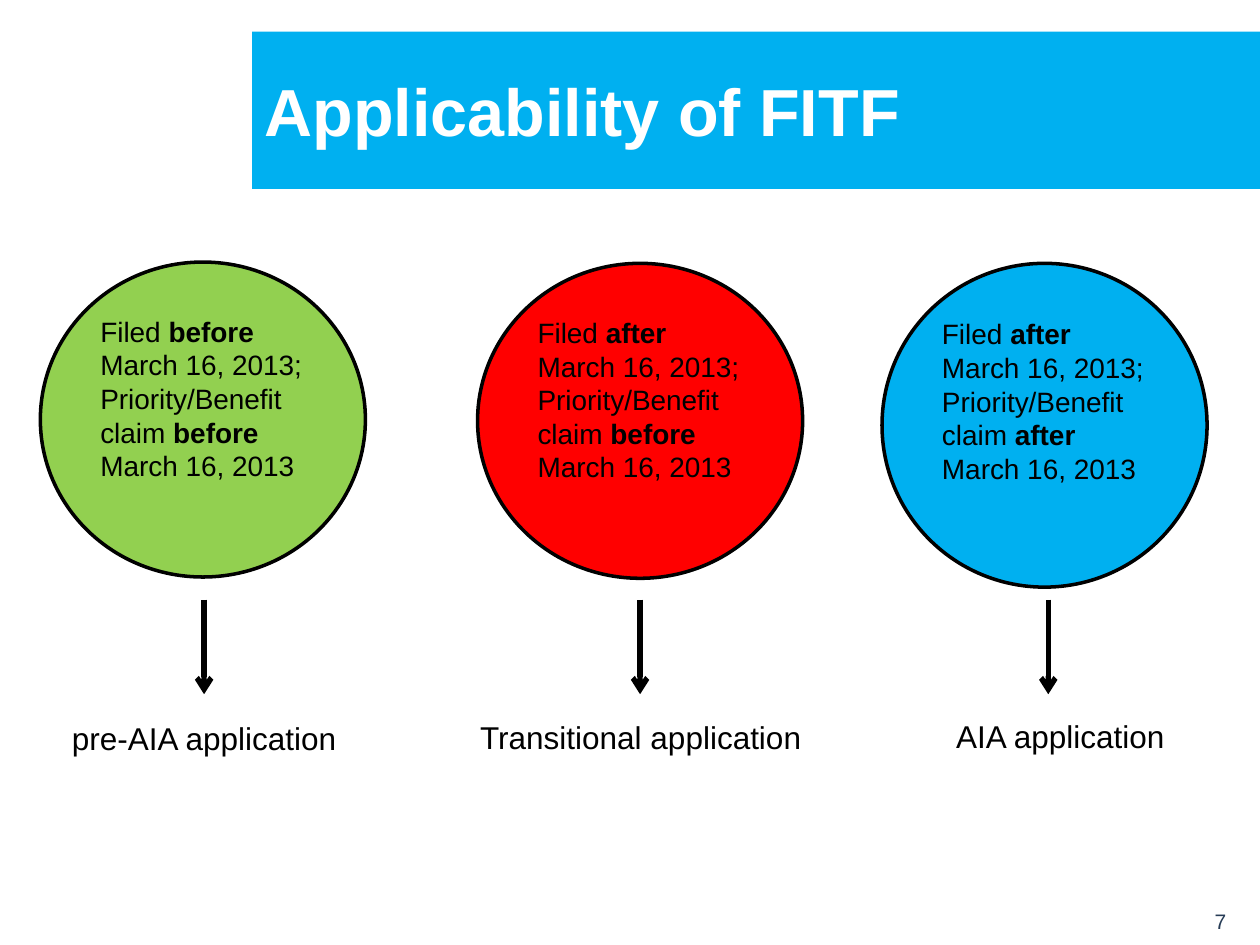
from dataclasses import dataclass

from lxml import etree
from pptx import Presentation
from pptx.dml.color import RGBColor
from pptx.enum.shapes import MSO_CONNECTOR, MSO_SHAPE
from pptx.enum.text import MSO_ANCHOR, MSO_AUTO_SIZE, PP_ALIGN
from pptx.oxml.ns import qn
from pptx.util import Inches, Pt

ELLIPSE = MSO_SHAPE.OVAL
STRAIGHT = MSO_CONNECTOR.STRAIGHT
TOP, MIDDLE, BOTTOM = MSO_ANCHOR.TOP, MSO_ANCHOR.MIDDLE, MSO_ANCHOR.BOTTOM
LEFT, CENTER, RIGHT = PP_ALIGN.LEFT, PP_ALIGN.CENTER, PP_ALIGN.RIGHT
NO_FIT = MSO_AUTO_SIZE.NONE
FIT_SHAPE = MSO_AUTO_SIZE.SHAPE_TO_FIT_TEXT


@dataclass(frozen=True)
class Theme:
    """Colours, font and type sizes of the slide."""

    font: str = "Arial"
    white: str = "FFFFFF"
    black: str = "000000"
    navy: str = "273C56"
    blue: str = "00B0F0"
    green: str = "92D050"
    red: str = "FF0000"
    title_size: int = 38
    label_size: int = 18
    body_size: int = 16
    number_size: int = 12


THEME = Theme()

CASES = [
    {
        "circle": (0.32, 2.08, 2.58, 2.5),
        "fill": THEME.green,
        "paragraphs": [
            [("Filed ", False), ("before", True), (" March 16, 2013;", False)],
            [("Priority/Benefit claim ", False), ("before", True), (" March 16, 2013", False)],
        ],
        "arrow_x": 1.62,
        "label": "pre-AIA application",
        "label_box": (0.46, 5.66, 2.32, 0.4),
    },
    {
        "circle": (3.79, 2.09, 2.58, 2.5),
        "fill": THEME.red,
        "paragraphs": [
            [("Filed ", False), ("after", True),
             (" March 16, 2013; Priority/Benefit claim ", False),
             ("before", True), (" March 16, 2013", False)],
        ],
        "arrow_x": 5.08,
        "label": "Transitional application",
        "label_box": (3.7, 5.65, 2.77, 0.4),
    },
    {
        "circle": (7, 2.09, 2.58, 2.57),
        "fill": THEME.blue,
        "paragraphs": [
            [("Filed ", False), ("after", True),
             (" March 16, 2013; Priority/Benefit claim ", False),
             ("after", True), (" March 16, 2013", False)],
        ],
        "arrow_x": 8.32,
        "label": "AIA application",
        "label_box": (7.48, 5.64, 1.87, 0.4),
    },
]


def inches(box):
    """Turn a tuple of numbers into lengths."""
    return [Inches(value) for value in box]


def paint(fill, color):
    """Give a fill one solid colour."""
    fill.solid()
    fill.fore_color.rgb = RGBColor.from_string(color)


def write_runs(paragraph, runs, size, color, alignment=LEFT):
    """Add (text, bold) runs to a paragraph."""
    paragraph.alignment = alignment
    for text, bold in runs:
        run = paragraph.add_run()
        run.text = text
        run.font.name = THEME.font
        run.font.size = Pt(size)
        run.font.bold = bold
        run.font.color.rgb = RGBColor.from_string(color)


def add_title(slide, box, text):
    """Place the title placeholder as a coloured band."""
    title = slide.shapes.title
    title.left, title.top, title.width, title.height = inches(box)
    paint(title.fill, THEME.blue)
    frame = title.text_frame
    frame.auto_size = NO_FIT
    frame.vertical_anchor = MIDDLE
    write_runs(frame.paragraphs[0], [(text, True)], THEME.title_size, THEME.white)


def add_circle(slide, box, fill, paragraphs):
    """Draw an outlined circle holding the filing conditions."""
    circle = slide.shapes.add_shape(ELLIPSE, *inches(box))
    circle.shadow.inherit = False
    paint(circle.fill, fill)
    paint(circle.line.fill, THEME.black)
    circle.line.width = Pt(2)
    frame = circle.text_frame
    frame.word_wrap = True
    frame.vertical_anchor = TOP
    for index, runs in enumerate(paragraphs):
        paragraph = frame.add_paragraph() if index else frame.paragraphs[0]
        write_runs(paragraph, runs, THEME.body_size, THEME.black)


def add_arrow(slide, x, top, bottom):
    """Draw a vertical arrow pointing down."""
    arrow = slide.shapes.add_connector(STRAIGHT, *inches((x, top, x, bottom)))
    paint(arrow.line.fill, THEME.black)
    arrow.line.width = Pt(3)
    etree.SubElement(arrow.line._get_or_add_ln(), qn("a:tailEnd"), type="arrow")
    etree.SubElement(arrow._element.spPr, qn("a:effectLst"))


def add_label(slide, box, text):
    """Place a centred application type under its arrow."""
    frame = slide.shapes.add_textbox(*inches(box)).text_frame
    frame.word_wrap = False
    frame.auto_size = FIT_SHAPE
    write_runs(frame.paragraphs[0], [(text, False)], THEME.label_size, THEME.black, CENTER)


def add_case(slide, case):
    """Build one column: circle, arrow and label."""
    add_circle(slide, case["circle"], case["fill"], case["paragraphs"])
    add_arrow(slide, case["arrow_x"], 4.76, 5.51)
    add_label(slide, case["label_box"], case["label"])


def add_slide_number(slide, box, text):
    """Place the slide number at the bottom right."""
    frame = slide.shapes.add_textbox(*inches(box)).text_frame
    frame.word_wrap = True
    frame.vertical_anchor = BOTTOM
    frame.margin_bottom = Inches(0.01)
    write_runs(frame.paragraphs[0], [(text, False)], THEME.number_size, THEME.navy, RIGHT)


def main():
    """Build and save the presentation."""
    presentation = Presentation()
    presentation.slide_width = Inches(10)
    presentation.slide_height = Inches(7.5)
    slide = presentation.slides.add_slide(presentation.slide_layouts.get_by_name("Title Only"))
    paint(slide.background.fill, THEME.white)
    add_title(slide, (2, 0.25, 8, 1.25), "Applicability of FITF")
    add_slide_number(slide, (7.75, 6.92, 2.08, 0.5), "7")
    for case in CASES:
        add_case(slide, case)
    presentation.save("out.pptx")


if __name__ == "__main__":
    main()
